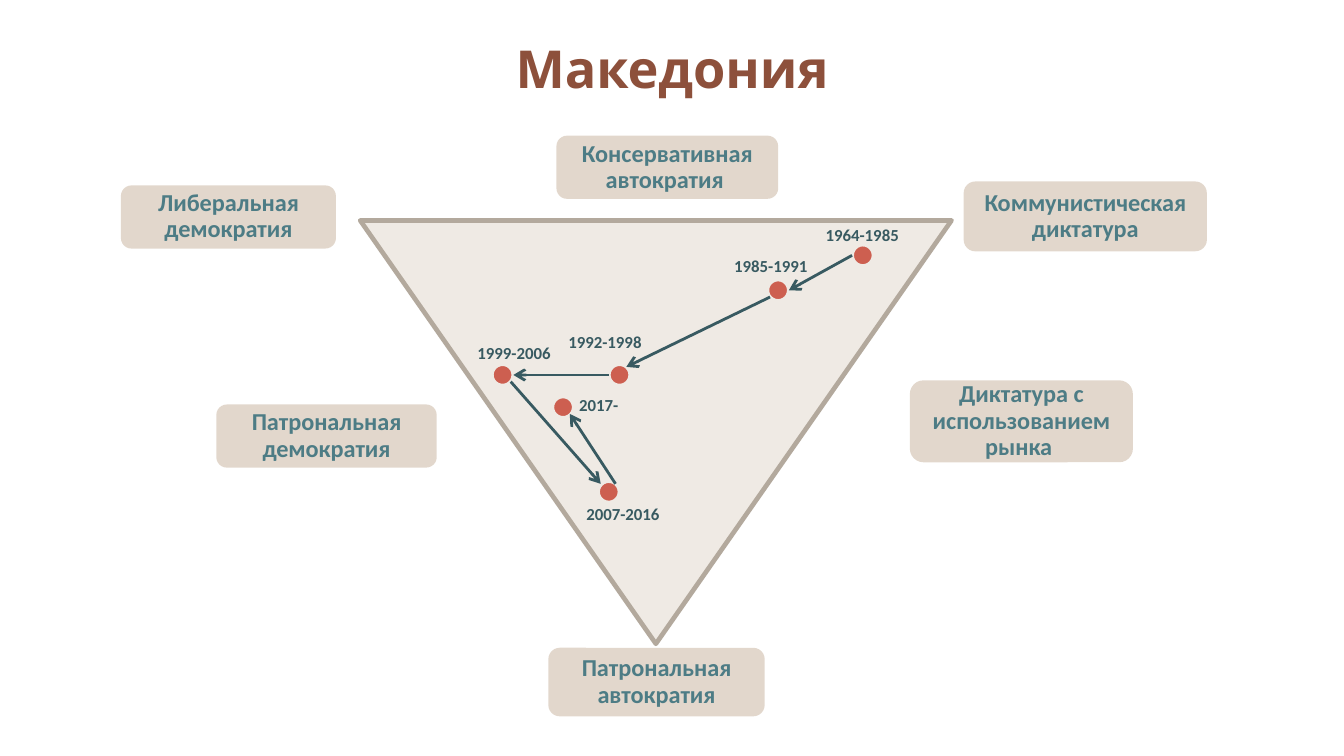
from pptx import Presentation
from pptx import util as u
from pptx.dml.color import RGBColor
from pptx.enum import shapes, text
from pptx.oxml import ns
from lxml import etree

BROWN = RGBColor(0x8D, 0x50, 0x3B)
TEAL = RGBColor(0x4D, 0x7C, 0x85)
DARK_TEAL = RGBColor(0x38, 0x5A, 0x61)
SAND = RGBColor(0xC7, 0xB0, 0x9A)
PALE = RGBColor(0xEF, 0xEA, 0xE4)
TAUPE = RGBColor(0xB3, 0xA9, 0x9D)
RED = RGBColor(0xCD, 0x5F, 0x50)

TITLE = "Македония"
SLIDE_WIDTH = 10
SLIDE_HEIGHT = SLIDE_WIDTH * 9 / 16
TRIANGLE = (2.68, 1.64, 4.4, 3.15)
DOT_SIZE = 0.16
LABEL_HEIGHT = 0.25
CENTER, LEFT = text.PP_ALIGN.CENTER, text.PP_ALIGN.LEFT

REGIMES = [
    ("Коммунистическая диктатура", (7.17, 1.35, 1.81, 0.52)),
    ("Либеральная демократия", (0.9, 1.38, 1.6, 0.47)),
    ("Патрональная автократия", (4.08, 4.82, 1.61, 0.51)),
    ("Консервативная автократия ", (4.14, 1.01, 1.65, 0.47)),
    ("Диктатура с использованием рынка ", (6.77, 2.83, 1.66, 0.61)),
    ("Патрональная демократия", (1.61, 3.01, 1.64, 0.47)),
]
PERIODS = [
    ("1964-1985", (6.34, 1.82), (6.02, 1.62, 0.79), CENTER),
    ("1985-1991", (5.71, 2.08), (5.34, 1.85, 0.79), CENTER),
    ("1992-1998", (4.53, 2.71), (4.13, 2.42, 0.79), LEFT),
    ("1999-2006", (3.66, 2.71), (3.43, 2.5, 0.79), CENTER),
    ("2007-2016", (4.45, 3.58), (4.25, 3.7, 0.77), CENTER),
    ("2017-", (4.11, 2.95), (4.21, 2.89, 0.51), LEFT),
]
ARROWS = [
    ((6.34, 1.9), (5.87, 2.16)),
    ((5.73, 2.21), (4.66, 2.73)),
    ((4.53, 2.79), (3.82, 2.79)),
    ((3.8, 2.84), (4.47, 3.6)),
    ((4.58, 3.6), (4.24, 3.08)),
]


def inches(values):
    return [u.Inches(value) for value in values]


def write_text(shape, words, size, color, font="Calibri", align=CENTER,
               anchor=text.MSO_ANCHOR.MIDDLE, margin=None, spacing=None, wrap=True):
    frame = shape.text_frame
    frame.word_wrap = wrap
    frame.auto_size = text.MSO_AUTO_SIZE.NONE
    frame.vertical_anchor = anchor
    if margin is not None:
        frame.margin_left = frame.margin_right = u.Inches(margin)
        frame.margin_top = frame.margin_bottom = u.Inches(margin)
    paragraph = frame.paragraphs[0]
    paragraph.alignment = align
    paragraph.line_spacing = spacing
    run = paragraph.add_run()
    run.text = words
    run.font.name = font
    run.font.size = u.Pt(size)
    run.font.bold = True
    run.font.color.rgb = color


def add_figure(slide, kind, box, fill, line=None, width=0):
    shape = slide.shapes.add_shape(kind, *inches(box))
    shape.shadow.inherit = False
    shape.fill.solid()
    shape.fill.fore_color.rgb = fill
    if line is None:
        shape.line.fill.background()
    else:
        shape.line.color.rgb = line
        shape.line.width = u.Pt(width)
    return shape


def add_regime(slide, name, box):
    shape = add_figure(slide, shapes.MSO_SHAPE.ROUNDED_RECTANGLE, box, SAND)
    color = shape._element.spPr.find(ns.qn("a:solidFill")).find(ns.qn("a:srgbClr"))
    etree.SubElement(color, ns.qn("a:alpha"), val="50000")
    write_text(shape, name, 13, TEAL, margin=0.05, spacing=0.9)


def add_arrow(slide, start, end):
    arrow = slide.shapes.add_connector(shapes.MSO_CONNECTOR.STRAIGHT, *inches(start + end))
    arrow.line.color.rgb = DARK_TEAL
    arrow.line.width = u.Pt(1.5)
    properties = arrow._element.spPr
    etree.SubElement(properties.find(ns.qn("a:ln")), ns.qn("a:tailEnd"), type="arrow")
    etree.SubElement(properties, ns.qn("a:effectLst"))


def main():
    presentation = Presentation()
    presentation.slide_width = u.Inches(SLIDE_WIDTH)
    presentation.slide_height = u.Inches(SLIDE_HEIGHT)
    slide = presentation.slides.add_slide(presentation.slide_layouts[5])

    title = slide.shapes.title
    title.left, title.top, title.width, title.height = inches((0.12, 0, 9.76, 1))
    write_text(title, TITLE, 28, BROWN, font="Open Sans")

    triangle = add_figure(slide, shapes.MSO_SHAPE.ISOSCELES_TRIANGLE, TRIANGLE, PALE, TAUPE, 2.5)
    triangle.rotation = 180
    for name, box in REGIMES:
        add_regime(slide, name, box)
    for years, dot, label, align in PERIODS:
        add_figure(slide, shapes.MSO_SHAPE.OVAL, dot + (DOT_SIZE, DOT_SIZE), RED, PALE, 2)
        box = slide.shapes.add_textbox(*inches(label + (LABEL_HEIGHT,)))
        write_text(box, years, 9, DARK_TEAL, align=align, anchor=text.MSO_ANCHOR.TOP, wrap=False)
    for start, end in ARROWS:
        add_arrow(slide, start, end)

    presentation.save("out.pptx")


if __name__ == "__main__":
    main()
